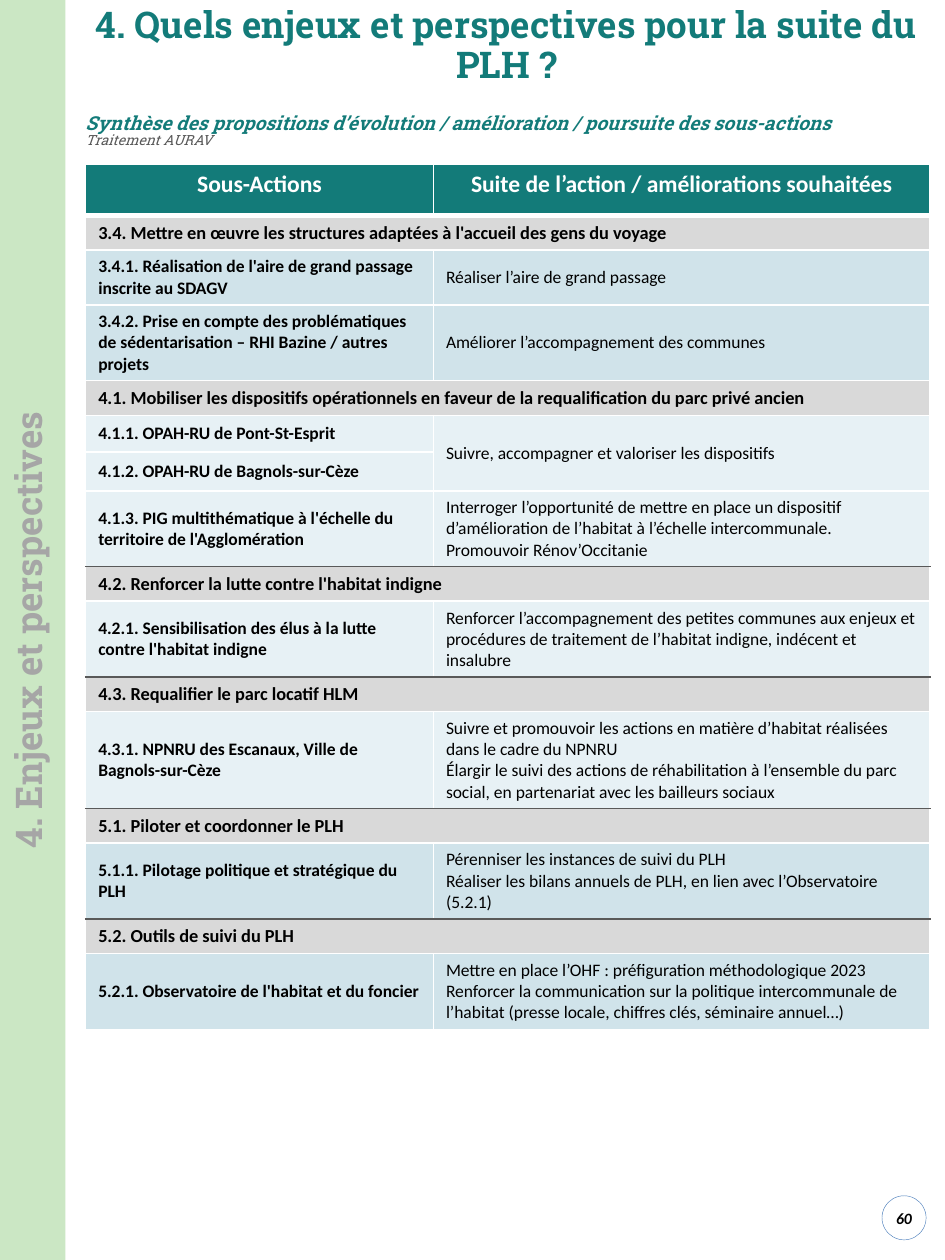
from dataclasses import dataclass
from typing import Optional

from lxml.etree import SubElement
from pptx import Presentation
from pptx.dml.color import RGBColor
from pptx.enum.shapes import MSO_SHAPE as Shape
from pptx.enum.text import MSO_ANCHOR as Anchor, PP_ALIGN as Align
from pptx.oxml.ns import qn
from pptx.util import Inches, Pt

TEAL = RGBColor(0x13, 0x7B, 0x79)
GREEN = RGBColor(0x32, 0xA2, 0x14)
BLUE = RGBColor(0x4F, 0x81, 0xBD)
PALE = RGBColor(0xE7, 0xF1, 0xF5)
SKY = RGBColor(0xD0, 0xE3, 0xEA)
SILVER = RGBColor(0xD9, 0xD9, 0xD9)
GREY = RGBColor(0xA6, 0xA6, 0xA6)
DARK = RGBColor(0x59, 0x59, 0x59)
BLACK = RGBColor(0, 0, 0)
WHITE = RGBColor(0xFF, 0xFF, 0xFF)
SLAB, SANS = "Roboto Slab", "Calibri"


@dataclass
class Action:
    name: str
    plan: Optional[str]  # None: shares the cell above
    height: float
    fill: RGBColor


@dataclass
class Theme:
    title: str
    actions: list[Action]
    ruled: bool = True  # dark line above


THEMES = [
    Theme("3.4. Mettre en œuvre les structures adaptées à l'accueil des gens du voyage", [
        Action("3.4.1. Réalisation de l'aire de grand passage inscrite au SDAGV",
               "Réaliser l’aire de grand passage", 0.38, SKY),
        Action("3.4.2. Prise en compte des problématiques de sédentarisation – RHI Bazine / autres projets",
               "Améliorer l’accompagnement des communes", 0.51, SKY),
    ], ruled=False),
    Theme("4.1. Mobiliser les dispositifs opérationnels en faveur de la requalification du parc privé ancien", [
        Action("4.1.1. OPAH-RU de Pont-St-Esprit",
               "Suivre, accompagner et valoriser les dispositifs", 0.29, PALE),
        Action("4.1.2. OPAH-RU de Bagnols-sur-Cèze", None, 0.31, PALE),
        Action("4.1.3. PIG multithématique à l'échelle du territoire de l'Agglomération",
               "Interroger l’opportunité de mettre en place un dispositif d’amélioration de "
               "l’habitat à l’échelle intercommunale.\nPromouvoir Rénov’Occitanie", 0.51, PALE),
    ], ruled=False),
    Theme("4.2. Renforcer la lutte contre l'habitat indigne", [
        Action("4.2.1. Sensibilisation des élus à la lutte contre l'habitat indigne",
               "Renforcer l’accompagnement des petites communes aux enjeux et procédures de "
               "traitement de l’habitat indigne, indécent et insalubre", 0.51, PALE),
    ]),
    Theme("4.3. Requalifier le parc locatif HLM", [
        Action("4.3.1. NPNRU des Escanaux, Ville de Bagnols-sur-Cèze",
               "Suivre et promouvoir les actions en matière d’habitat réalisées dans le cadre du NPNRU\n"
               "Élargir le suivi des actions de réhabilitation à l’ensemble du parc social, "
               "en partenariat avec les bailleurs sociaux", 0.65, PALE),
    ]),
    Theme("5.1. Piloter et coordonner le PLH", [
        Action("5.1.1. Pilotage politique et stratégique du PLH",
               "Pérenniser les instances de suivi du PLH\n"
               "Réaliser les bilans annuels de PLH, en lien avec l’Observatoire (5.2.1)", 0.51, SKY),
    ]),
    Theme("5.2. Outils de suivi du PLH", [
        Action("5.2.1. Observatoire de l'habitat et du foncier",
               "Mettre en place l’OHF : préfiguration méthodologique 2023\n"
               "Renforcer la communication sur la politique intercommunale de l’habitat "
               "(presse locale, chiffres clés, séminaire annuel…)", 0.51, SKY),
    ]),
]


def style(para, size: float, color: RGBColor, face: str = SANS, bold: bool = True,
          italic: bool = False, align=Align.LEFT) -> None:
    para.alignment = align
    font = para.font
    font.name, font.size, font.bold, font.italic = face, Pt(size), bold, italic
    font.color.rgb = color


def place(shape, left: float, top: float, width: float, height: float) -> None:
    shape.left, shape.top = Inches(left), Inches(top)
    shape.width, shape.height = Inches(width), Inches(height)


def add_box(slide, left: float, top: float, width: float, height: float):
    box = slide.shapes.add_textbox(*map(Inches, (left, top, width, height)))
    box.text_frame.word_wrap = True
    return box


def set_edge(cell, side: str, color: RGBColor, width: float = 0.96) -> None:
    line = SubElement(cell._tc.get_or_add_tcPr(), qn(f"a:{side}"), w=str(Pt(width)))
    fill = SubElement(line, qn("a:solidFill"))
    SubElement(fill, qn("a:srgbClr"), val=str(color))


def fill_cell(cell, text: str, fill: RGBColor, size: float, color: RGBColor = BLACK,
              bold: bool = True, align=Align.LEFT, anchor=Anchor.MIDDLE) -> None:
    cell.text = text
    cell.vertical_anchor = anchor
    for para in cell.text_frame.paragraphs:
        style(para, size, color, bold=bold, align=align)


def paint(cell, fill: RGBColor, top: RGBColor = WHITE, base: RGBColor = WHITE,
          width: float = 0.96) -> None:
    set_edge(cell, "lnL", WHITE)
    set_edge(cell, "lnR", WHITE)
    set_edge(cell, "lnT", top)
    set_edge(cell, "lnB", base, width)
    cell.fill.solid()
    cell.fill.fore_color.rgb = fill


def add_grid(slide) -> None:
    count = 1 + sum(1 + len(theme.actions) for theme in THEMES)
    frame = slide.shapes.add_table(count, 2, *map(Inches, (0.68, 1.3, 6.7, 6.15)))
    grid = frame.table
    grid.horz_banding = False
    for col, width in zip(grid.columns, (2.76, 3.94)):
        col.width = Inches(width)

    # Header
    grid.rows[0].height = Inches(0.41)
    for col, text in enumerate(("Sous-Actions", "Suite de l’action / améliorations souhaitées")):
        cell = grid.cell(0, col)
        fill_cell(cell, text, TEAL, 13.5, WHITE, align=Align.CENTER, anchor=Anchor.TOP)
        paint(cell, TEAL, width=3)

    # Themes, each followed by its actions
    row = 1
    for theme, after in zip(THEMES, THEMES[1:] + [None]):
        grid.rows[row].height = Inches(0.25)
        head = grid.cell(row, 0)
        head.merge(grid.cell(row, 1))
        fill_cell(head, theme.title, SILVER, 10.5)
        for col in range(2):
            paint(grid.cell(row, col), SILVER, top=DARK if theme.ruled else WHITE)
        row += 1
        for action in theme.actions:
            grid.rows[row].height = Inches(action.height)
            name, plan = grid.cell(row, 0), grid.cell(row, 1)
            fill_cell(name, action.name, action.fill, 10)
            if action.plan is None:
                grid.cell(row - 1, 1).merge(plan)
            else:
                fill_cell(plan, action.plan, action.fill, 10, bold=False)
            last = action is theme.actions[-1]
            base = DARK if last and after and after.ruled else WHITE
            for cell in (name, plan):
                paint(cell, action.fill, base=base)
            row += 1


def main() -> None:
    deck = Presentation()
    deck.slide_width, deck.slide_height = Inches(7.5), Inches(10)
    slide = deck.slides.add_slide(deck.slide_layouts[5])

    # Page number
    badge = slide.shapes.add_shape(Shape.OVAL, *map(Inches, (7, 9.49, 0.35, 0.35)))
    badge.shadow.inherit = False
    badge.fill.background()
    badge.line.color.rgb, badge.line.width = BLUE, Pt(0.25)
    text = badge.text_frame
    text.margin_left = text.margin_right = text.margin_top = text.margin_bottom = 0
    text.vertical_anchor = Anchor.MIDDLE
    text.text = "60"
    style(text.paragraphs[0], 9, BLACK, italic=True, align=Align.CENTER)

    # Side band
    band = slide.shapes.add_shape(Shape.RECTANGLE, 0, 0, Inches(0.52), Inches(10))
    band.shadow.inherit = False
    band.fill.solid()
    band.fill.fore_color.rgb = GREEN
    tint = band.fill._xPr.find(qn("a:solidFill"))[0]
    SubElement(tint, qn("a:alpha"), val="25000")
    band.line.fill.background()
    label = add_box(slide, -4.74, 4.74, 10, 0.52)
    label.rotation = 270
    label.text_frame.text = "4. Enjeux et perspectives"
    style(label.text_frame.paragraphs[0], 21, GREY, SLAB, align=Align.CENTER)

    # Title
    title = slide.shapes.title
    place(title, 0.52, 0.01, 7, 0.72)
    title.text_frame.text = "4. Quels enjeux et perspectives pour la suite du PLH ?"
    title.text_frame.vertical_anchor = Anchor.MIDDLE
    para = title.text_frame.paragraphs[0]
    style(para, 21, TEAL, SLAB, align=Align.CENTER)
    para.line_spacing = 0.9

    # Subtitle and credit
    text = add_box(slide, 0.58, 0.83, 6.78, 0.39).text_frame
    text.text = ("Synthèse des propositions d’évolution / amélioration / poursuite des sous-actions\n"
                 "Traitement AURAV")
    lead, credit = text.paragraphs
    style(lead, 11, TEAL, SLAB, italic=True)
    style(credit, 8, DARK, SLAB, bold=False, italic=True)
    credit.line_spacing = 0.9

    add_grid(slide)
    deck.save("out.pptx")


if __name__ == "__main__":
    main()
